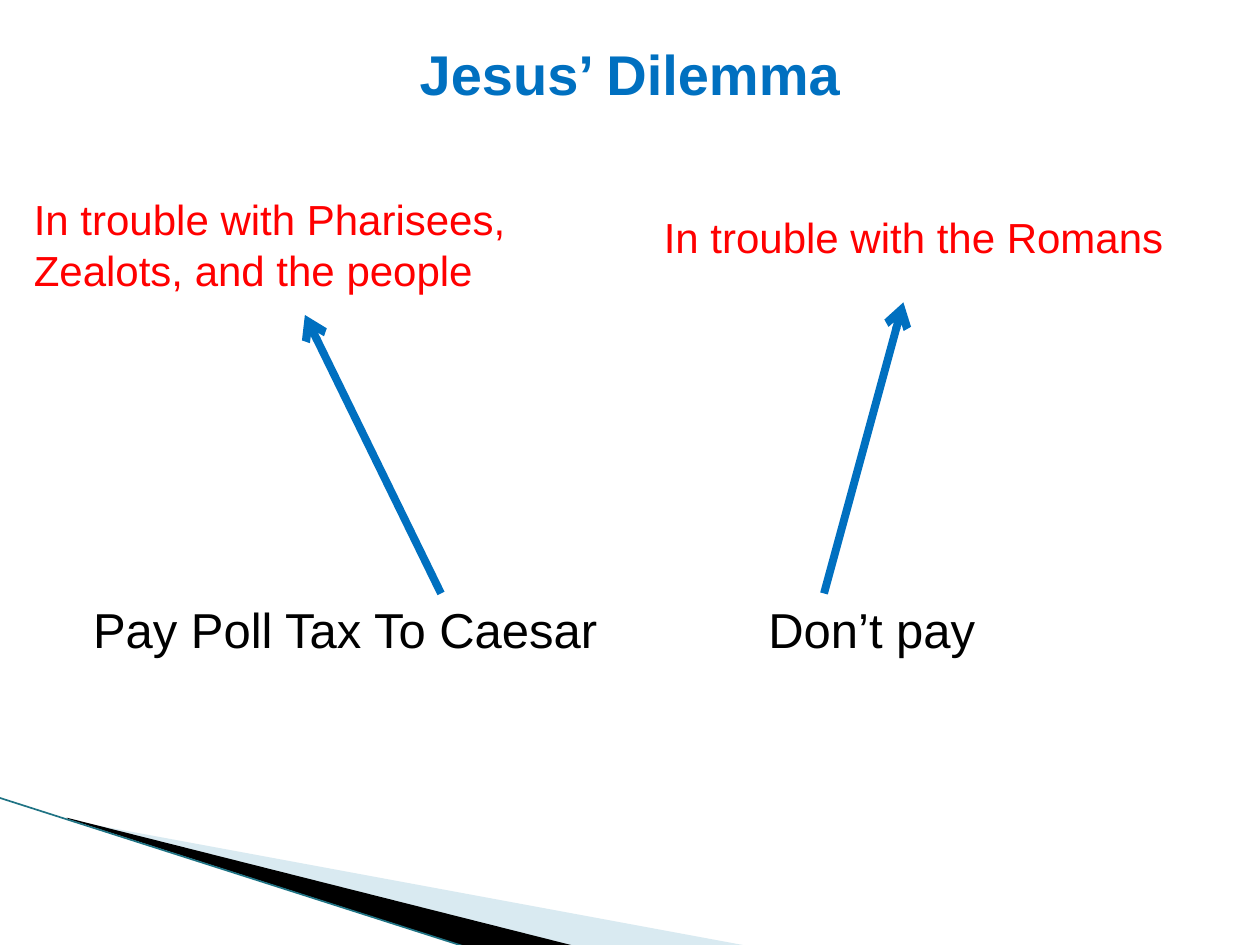
from lxml import etree
from pptx import Presentation
from pptx.dml.color import RGBColor
from pptx.enum import shapes, text
from pptx.oxml.ns import qn
from pptx.util import Inches, Pt

FONT = "Arial"
BLUE, RED, BLACK = "0070C0", "FF0000", "000000"
PALE_BLUE, TEAL = "A0CBDC", "1F7384"

TITLE = "Jesus’ Dilemma"
# text, (left, top, width, height), size, colour
LABELS = [
    ("Pay Poll Tax To Caesar", (0.64, 4.71, 4.33, 0.57), 28, BLACK),
    ("Don’t pay", (6, 4.71, 2.67, 0.57), 28, BLACK),
    ("In trouble with Pharisees, Zealots, and the people",
     (0.17, 1.49, 4.25, 0.91), 24, RED),
    ("In trouble with the Romans", (5.17, 1.63, 4.33, 0.5), 24, RED),
]
ARROWS = [((3.5, 4.71), (2.42, 2.5)), ((6.54, 4.71), (7.17, 2.4))]
# points, colour, opacity in percent
WEDGES = [
    ([(0.55, 6.51), (5.95, 7.51), (4.56, 7.51), (0.55, 6.5)], PALE_BLUE, 40),
    ([(0.53, 6.49), (4.57, 7.51), (3.72, 7.52), (0.54, 6.5)], BLACK, 100),
]
EDGE = ((-0.01, 6.33), (3.71, 7.52))


def rgb(colour):
    return RGBColor.from_string(colour)


def inches(values):
    return [Inches(value) for value in values]


def write(frame, words, size, colour, bold=False, align=text.PP_ALIGN.LEFT,
          anchor=text.MSO_ANCHOR.TOP):
    frame.word_wrap = True
    frame.vertical_anchor = anchor
    para = frame.paragraphs[0]
    para.alignment = align
    span = para.add_run()
    span.text = words
    span.font.name = FONT
    span.font.size = Pt(size)
    span.font.bold = bold
    span.font.color.rgb = rgb(colour)


def add_wedge(page, points, colour, opacity):
    corners = [inches(point) for point in points]
    builder = page.shapes.build_freeform(*corners[0], scale=1.0)
    builder.add_line_segments(corners[1:], close=True)
    wedge = builder.convert_to_shape()
    wedge.shadow.inherit = False
    wedge.line.fill.background()
    wedge.fill.solid()
    wedge.fill.fore_color.rgb = rgb(colour)
    if opacity < 100:
        tint = wedge.fill._xPr.find(".//" + qn("a:srgbClr"))
        etree.SubElement(tint, qn("a:alpha"), val=str(opacity * 1000))


def add_line(page, start, end, colour, width, arrow=False):
    line = page.shapes.add_connector(
        shapes.MSO_CONNECTOR.STRAIGHT, *inches(start), *inches(end))
    line.line.color.rgb = rgb(colour)
    line.line.width = Pt(width)
    if arrow:
        etree.SubElement(line.line._get_or_add_ln(), qn("a:tailEnd"), type="arrow")
    etree.SubElement(line._element.spPr, qn("a:effectLst"))


def main():
    deck = Presentation()
    deck.slide_width, deck.slide_height = Inches(10), Inches(7.5)
    page = deck.slides.add_slide(deck.slide_layouts[5])

    for wedge in WEDGES:
        add_wedge(page, *wedge)
    add_line(page, *EDGE, TEAL, 0.95)

    title = page.shapes.title
    title.left, title.top, title.width, title.height = inches((0.5, 0.08, 9, 1))
    write(title.text_frame, TITLE, 32, BLUE, bold=True,
          align=text.PP_ALIGN.CENTER, anchor=text.MSO_ANCHOR.MIDDLE)

    for words, place, size, colour in LABELS:
        box = page.shapes.add_textbox(*inches(place))
        write(box.text_frame, words, size, colour)
    for start, end in ARROWS:
        add_line(page, start, end, BLUE, 4.5, arrow=True)

    deck.save("out.pptx")


if __name__ == "__main__":
    main()
